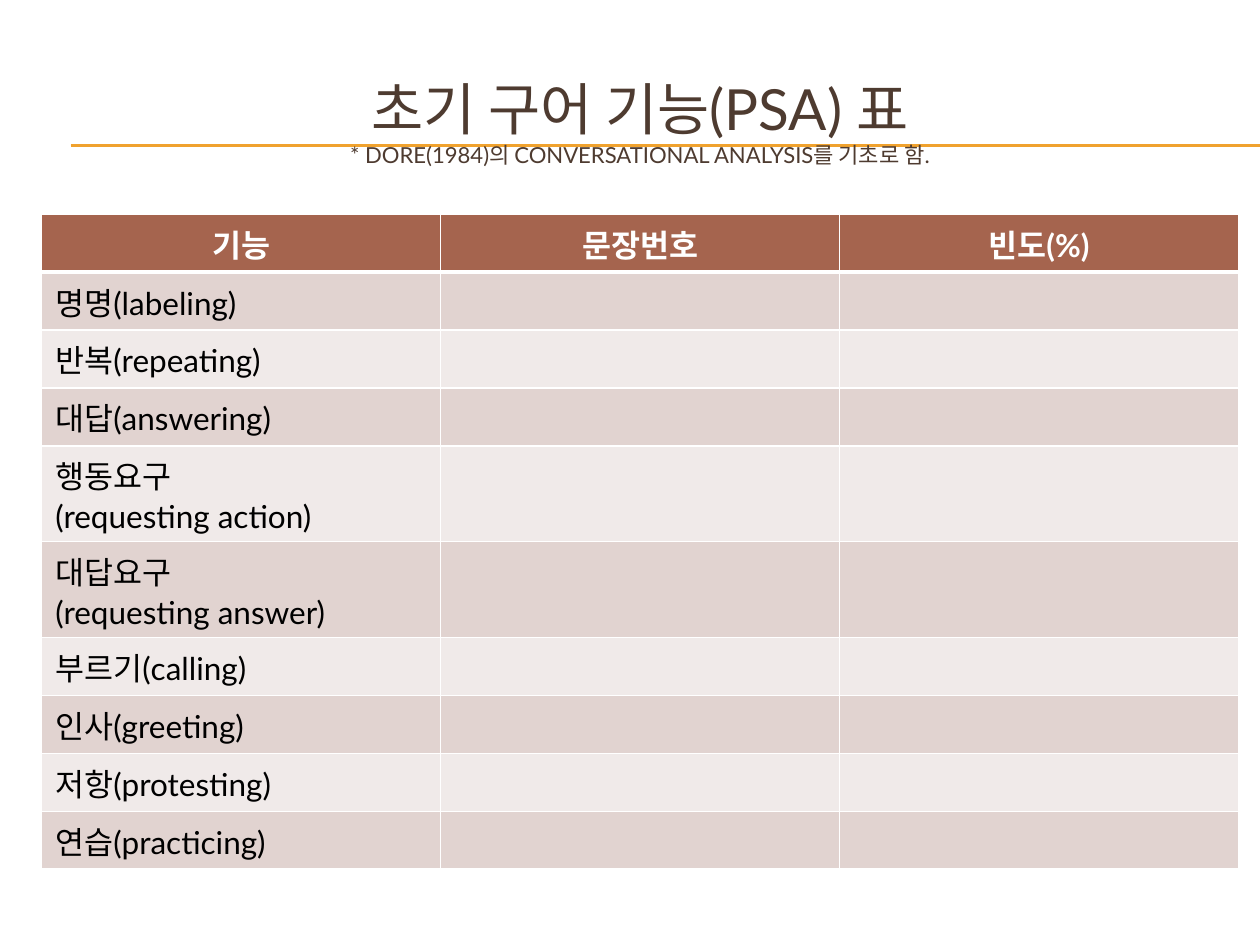
from lxml import etree
from pptx import Presentation
from pptx.dml.color import RGBColor
from pptx.enum import shapes, text
from pptx.oxml import parse_xml
from pptx.oxml.ns import qn
from pptx.util import Inches, Pt

WHITE = RGBColor(0xFF, 0xFF, 0xFF)
BLACK = RGBColor(0, 0, 0)
BROWN = RGBColor(0x4E, 0x3B, 0x30)
GOLD = RGBColor(0xF0, 0xA2, 0x2E)
RUST = RGBColor(0xA5, 0x64, 0x4E)
ROSE = RGBColor(0xE1, 0xD3, 0xD0)
PALE = RGBColor(0xF0, 0xEA, 0xE9)
NS = "http://schemas.openxmlformats.org/drawingml/2006/main"


def write(para, words, size=18, color=BLACK, bold=False, center=False):
    para.alignment = text.PP_ALIGN.CENTER if center else text.PP_ALIGN.LEFT
    run = para.add_run()
    run.text = words
    run.font.name = "Lato"
    run.font.size = Pt(size)
    run.font.bold = bold
    run.font.color.rgb = color


def dress(cell, fill, base=1):
    """Fill the cell and give it white borders, with base as the lower width."""
    cell.margin_left = cell.margin_right = Inches(0.11)
    cell.margin_top = cell.margin_bottom = Inches(0.05)
    props = cell._tc.get_or_add_tcPr()
    for side, width in zip("LRTB", (1, 1, 1, base)):
        props.append(parse_xml(
            f'<a:ln{side} xmlns:a="{NS}" w="{Pt(width)}"><a:solidFill>'
            f'<a:srgbClr val="{WHITE}"/></a:solidFill></a:ln{side}>'))
    cell.fill.solid()
    cell.fill.fore_color.rgb = fill


prs = Presentation()
prs.slide_width, prs.slide_height = Inches(10), Inches(7.5)
slide = prs.slides.add_slide(prs.slide_layouts[6])

for y in (1.15, 1.16):
    rule = slide.shapes.add_connector(
        shapes.MSO_CONNECTOR.STRAIGHT,
        Inches(0.56), Inches(y), Inches(10), Inches(y))
    rule.line.color.rgb = GOLD
    rule.line.width = Pt(0.75)
    etree.SubElement(rule._element.spPr, qn("a:effectLst"))

title = slide.shapes.add_textbox(
    Inches(0.33), Inches(0.5), Inches(9.5), Inches(0.92)).text_frame
title.word_wrap = True
title.vertical_anchor = text.MSO_ANCHOR.MIDDLE
head = title.paragraphs[0]
write(head, "초기 구어 기능(PSA) 표", size=32.4, color=BROWN, center=True)
head.add_line_break()
write(head, "* DORE(1984)의 CONVERSATIONAL ANALYSIS를 기초로 함.",
      size=12.6, color=BROWN, center=True)

heads = ["기능", "문장번호", "빈도(%)"]
kinds = ["명명(labeling)", "반복(repeating)", "대답(answering)",
         "행동요구\n(requesting action)", "대답요구\n(requesting answer)",
         "부르기(calling)", "인사(greeting)", "저항(protesting)",
         "연습(practicing)"]
table = slide.shapes.add_table(
    len(kinds) + 1, len(heads),
    Inches(0.33), Inches(1.7), Inches(9.5), Inches(4.6)).table

for col, words in enumerate(heads):
    cell = table.cell(0, col)
    dress(cell, RUST, base=3)
    write(cell.text_frame.paragraphs[0], words, color=WHITE, bold=True,
          center=True)

for row, words in enumerate(kinds, 1):
    lines = words.split("\n")
    table.rows[row].height = Inches(0.76 if len(lines) > 1 else 0.46)
    for col in range(len(heads)):
        dress(table.cell(row, col), ROSE if row % 2 else PALE)
    frame = table.cell(row, 0).text_frame
    for i, line in enumerate(lines):
        write(frame.add_paragraph() if i else frame.paragraphs[0], line)

prs.save("out.pptx")
